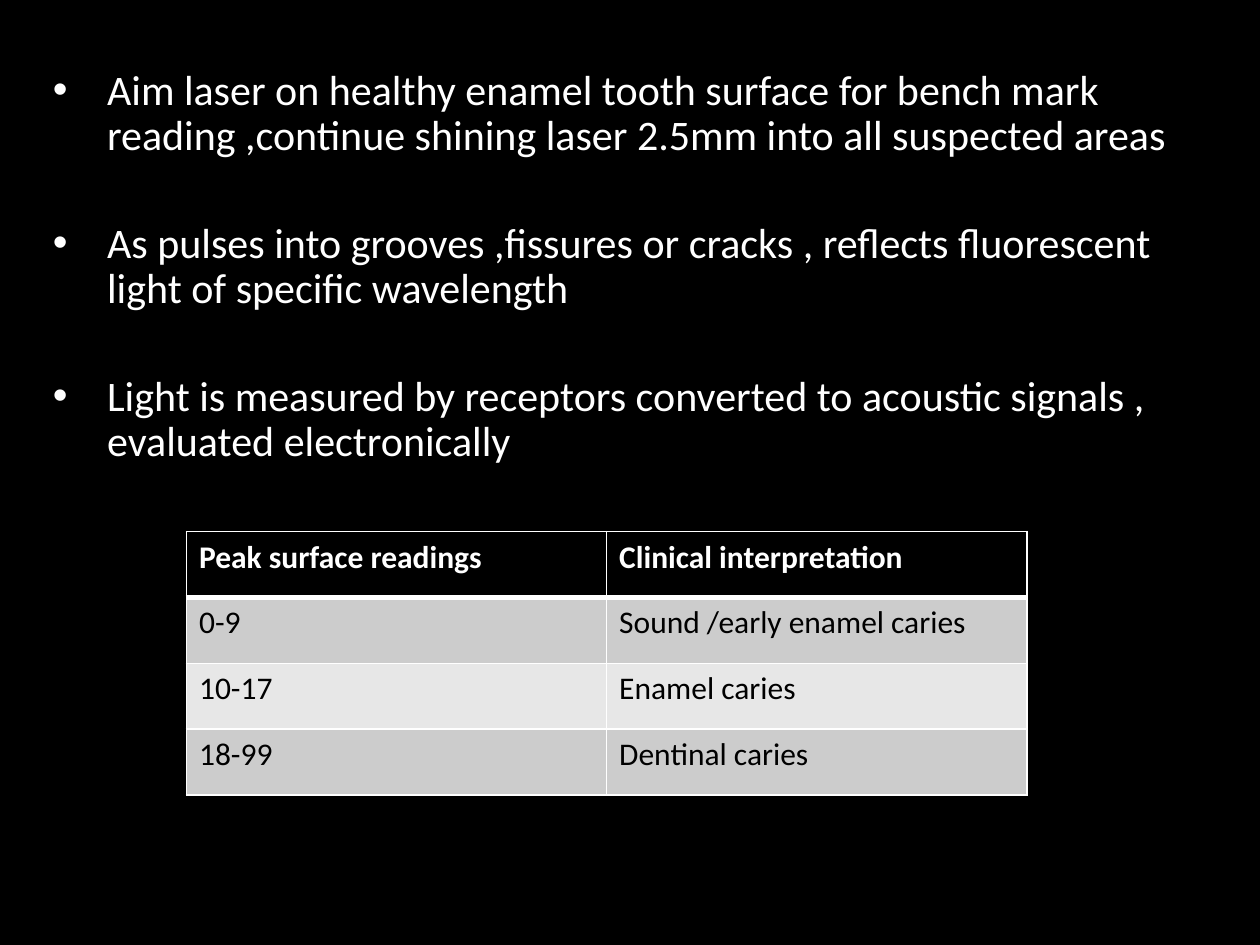
from dataclasses import dataclass

from pptx import Presentation
from pptx.dml.color import RGBColor
from pptx.enum.text import MSO_ANCHOR, MSO_AUTO_SIZE, PP_ALIGN
from pptx.oxml.ns import qn
from pptx.util import Inches, Pt
from lxml import etree

LEFT = PP_ALIGN.LEFT
TOP = MSO_ANCHOR.TOP
NO_AUTOFIT = MSO_AUTO_SIZE.NONE
TITLE_AND_CONTENT = 1


@dataclass(frozen=True)
class Theme:
    font: str = "Calibri"
    black: str = "000000"
    white: str = "FFFFFF"
    bands: tuple = ("CCCCCC", "E7E7E7")
    body_size: int = 24
    table_size: int = 18
    point_gap: float = 35.5
    rule: int = 1
    header_rule: int = 3


THEME = Theme()

POINTS = [
    "Aim laser on healthy enamel tooth surface for bench mark reading ,"
    "continue shining laser 2.5mm into all suspected areas",
    "As pulses into grooves ,fissures or cracks , reflects fluorescent "
    "light of specific wavelength",
    "Light is measured by receptors converted to acoustic signals , "
    "evaluated electronically",
]
READINGS = [
    ("Peak surface readings", "Clinical interpretation"),
    ("0-9", "Sound /early enamel caries"),
    ("10-17", "Enamel caries"),
    ("18-99", "Dentinal caries"),
]


def write(p, text, size, color, bold=False):
    p.alignment = LEFT
    r = p.add_run()
    r.text = text
    r.font.name = THEME.font
    r.font.size = Pt(size)
    r.font.bold = bold
    r.font.color.rgb = RGBColor.from_string(color)


def add_bullet(p, indent):
    pPr = p._p.get_or_add_pPr()
    pPr.set("marL", str(indent))
    pPr.set("indent", str(-indent))
    etree.SubElement(pPr, qn("a:buFont"), typeface="Arial")
    etree.SubElement(pPr, qn("a:buChar"), char="•")


def add_points(s, points, left, top, width, height):
    body = s.placeholders[1]
    body.left, body.top, body.width, body.height = left, top, width, height
    tf = body.text_frame
    tf.word_wrap = True
    tf.auto_size = NO_AUTOFIT
    tf.vertical_anchor = TOP
    tf.margin_left = tf.margin_top = tf.margin_right = tf.margin_bottom = 0
    for i, point in enumerate(points):
        p = tf.add_paragraph() if i else tf.paragraphs[0]
        add_bullet(p, Inches(0.43))
        p.line_spacing = 0.9
        p.space_before = Pt(THEME.point_gap if i else 0)
        write(p, point, THEME.body_size, THEME.white)


def set_border(cell, side, width):
    tcPr = cell._tc.get_or_add_tcPr()
    ln = etree.SubElement(tcPr, qn(f"a:ln{side}"), w=str(Pt(width)))
    fill = etree.SubElement(ln, qn("a:solidFill"))
    etree.SubElement(fill, qn("a:srgbClr"), val=THEME.white)


def add_readings(s, rows, left, top, width, height):
    n_rows, n_cols = len(rows), len(rows[0])
    table = s.shapes.add_table(n_rows, n_cols, left, top, width, height).table
    for i, row in enumerate(rows):
        header = i == 0
        fill = THEME.black if header else THEME.bands[(i - 1) % 2]
        color = THEME.white if header else THEME.black
        thick_sides = {0: "B", 1: "T"}
        for j, text in enumerate(row):
            cell = table.cell(i, j)
            for side in "LRTB":
                thick = side == thick_sides.get(i)
                set_border(cell, side, THEME.header_rule if thick else THEME.rule)
            cell.fill.solid()
            cell.fill.fore_color.rgb = RGBColor.from_string(fill)
            write(cell.text_frame.paragraphs[0], text, THEME.table_size, color,
                  bold=header)


def main():
    prs = Presentation()
    prs.slide_width, prs.slide_height = Inches(10), Inches(7.5)
    s = prs.slides.add_slide(prs.slide_layouts[TITLE_AND_CONTENT])
    title = s.shapes.title._element
    title.getparent().remove(title)
    s.background.fill.solid()
    s.background.fill.fore_color.rgb = RGBColor.from_string(THEME.black)

    add_points(s, POINTS, Inches(0.42), Inches(0.55), Inches(9.17), Inches(5.45))
    add_readings(s, READINGS, Inches(1.48), Inches(4.22), Inches(6.67), Inches(2.09))
    prs.save("out.pptx")


if __name__ == "__main__":
    main()
